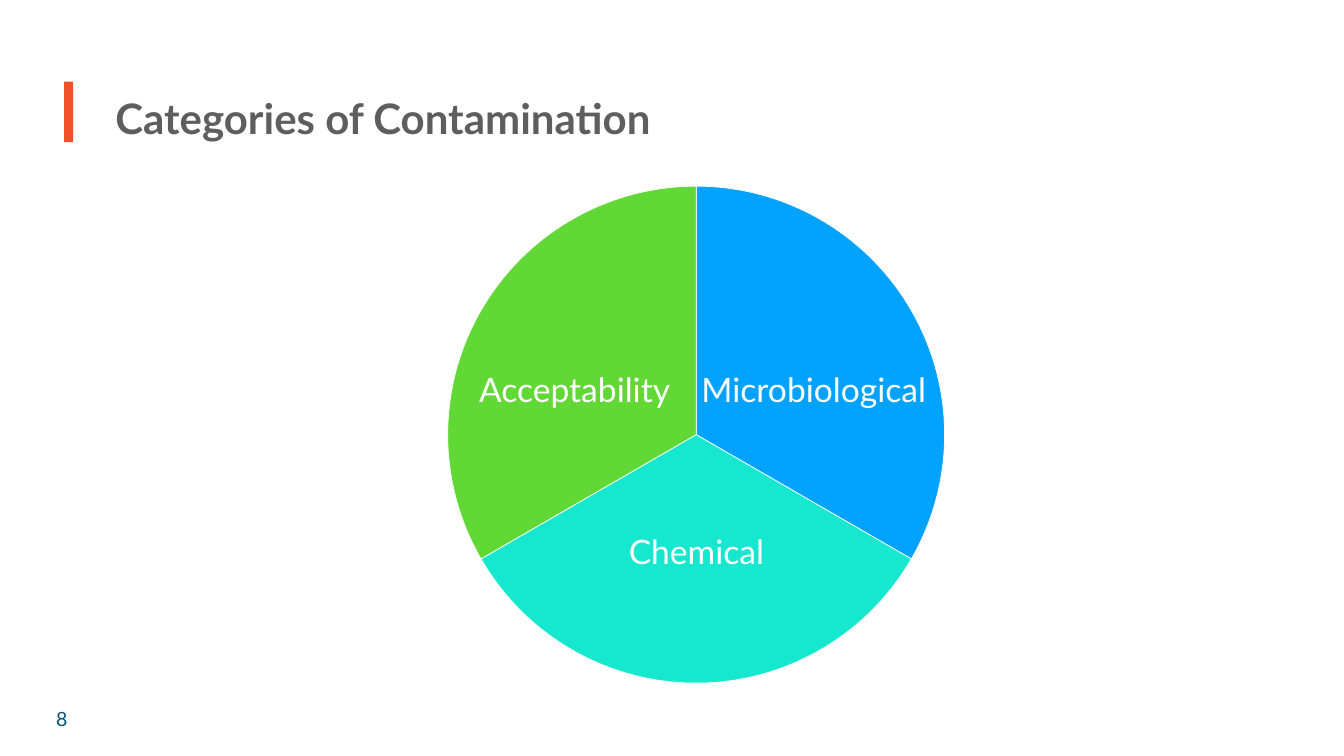
from dataclasses import dataclass

from lxml import etree
from pptx import Presentation
from pptx.chart.data import CategoryChartData
from pptx.dml.color import RGBColor
from pptx.enum.chart import XL_CHART_TYPE
from pptx.enum.shapes import MSO_SHAPE
from pptx.enum.text import PP_ALIGN
from pptx.oxml.ns import qn
from pptx.util import Pt

PIE = XL_CHART_TYPE.PIE
RECTANGLE = MSO_SHAPE.RECTANGLE
LEFT, CENTER = PP_ALIGN.LEFT, PP_ALIGN.CENTER
EMU_PER_PX = 9144  # 100 px to the inch


@dataclass(frozen=True)
class Theme:
    font: str = "Lato"
    chart_font: str = "Arial"
    accent: str = "F1512A"
    title: str = "5E5E5E"
    number: str = "025479"
    white: str = "FFFFFF"
    slices: tuple = ("00A2FF", "16E7CF", "61D836")
    title_size: int = 60
    label_size: int = 48
    number_size: int = 28
    chart_size: int = 10


THEME = Theme()


def px(*lengths):
    return [length * EMU_PER_PX for length in lengths]


def color(value):
    return RGBColor.from_string(value)


def add_text(slide, box, text, size, text_color, align=LEFT, bold=False,
             insets=(6, 6), wrap=True):
    """Add one line of text; insets are horizontal and vertical."""
    shape = slide.shapes.add_textbox(*px(*box))
    frame = shape.text_frame
    frame.word_wrap = wrap
    frame.margin_left = frame.margin_right = px(insets[0])[0]
    frame.margin_top = frame.margin_bottom = px(insets[1])[0]
    paragraph = frame.paragraphs[0]
    paragraph.alignment = align
    run = paragraph.add_run()
    run.text = text
    run.font.name = THEME.font
    run.font.size = Pt(size)
    run.font.bold = bold
    run.font.color.rgb = color(text_color)


def add_header(slide, box, title):
    left, top, width, height = box
    bar = slide.shapes.add_shape(RECTANGLE, *px(left, top, 18, 120))
    bar.shadow.inherit = False
    bar.fill.solid()
    bar.fill.fore_color.rgb = color(THEME.accent)
    bar.line.fill.background()
    add_text(slide, (left + 96, top + 15, width - 96, height - 15), title,
             THEME.title_size, THEME.title, bold=True)


def set_pie_area(chart, box, diameter):
    """Centre the pie in the chart box at a fixed diameter."""
    width, height = diameter / box[2], diameter / box[3]
    plot_area = chart.plots[0]._element.getparent()
    layout = plot_area.find(qn("c:layout"))
    if layout is None:
        layout = etree.Element(qn("c:layout"))
        plot_area.insert(0, layout)
    manual = etree.SubElement(layout, qn("c:manualLayout"))
    for name, value in (("layoutTarget", "inner"), ("xMode", "edge"), ("yMode", "edge"),
                        ("x", (1 - width) / 2), ("y", (1 - height) / 2),
                        ("w", width), ("h", height)):
        etree.SubElement(manual, qn(f"c:{name}")).set("val", str(value))


def add_category_pie(slide, box):
    left, top, width, height = box
    data = CategoryChartData()
    data.categories = ["1", "2", "3"]
    data.add_series("Series 1", (33, 33, 33))
    chart = slide.shapes.add_chart(PIE, *px(*box), data).chart
    chart.has_legend = False
    chart.has_title = False
    chart.font.name = THEME.chart_font
    chart.font.size = Pt(THEME.chart_size)
    chart.plots[0].vary_by_categories = True
    for index, slice_color in enumerate(THEME.slices):
        slice_format = chart.series[0].points[index].format
        slice_format.fill.solid()
        slice_format.fill.fore_color.rgb = color(slice_color)
        slice_format.line.color.rgb = color(THEME.white)
        slice_format.line.width = Pt(1)
    set_pie_area(chart, box, 986)

    labels = (("Microbiological", 1028, 372, 494, LEFT),
              ("Acceptability", 587, 372, 413, LEFT),
              ("Chemical", 881, 694, 294, CENTER))
    for text, x, y, label_width, align in labels:
        add_text(slide, (left + x, top + y, label_width, 91), text,
                 THEME.label_size, THEME.white, align, insets=(10, 5))


def main():
    presentation = Presentation()
    presentation.slide_width, presentation.slide_height = px(2667, 1500)
    slide = presentation.slides.add_slide(presentation.slide_layouts[6])
    slide.background.fill.solid()
    slide.background.fill.fore_color.rgb = color(THEME.white)
    add_header(slide, (127, 162, 1429, 126), "Categories of Contamination")
    add_category_pie(slide, (354, 355, 2055, 1015))
    add_text(slide, (95, 1396, 55, 58), "8", THEME.number_size, THEME.number,
             CENTER, wrap=False)
    presentation.save("out.pptx")


if __name__ == "__main__":
    main()
